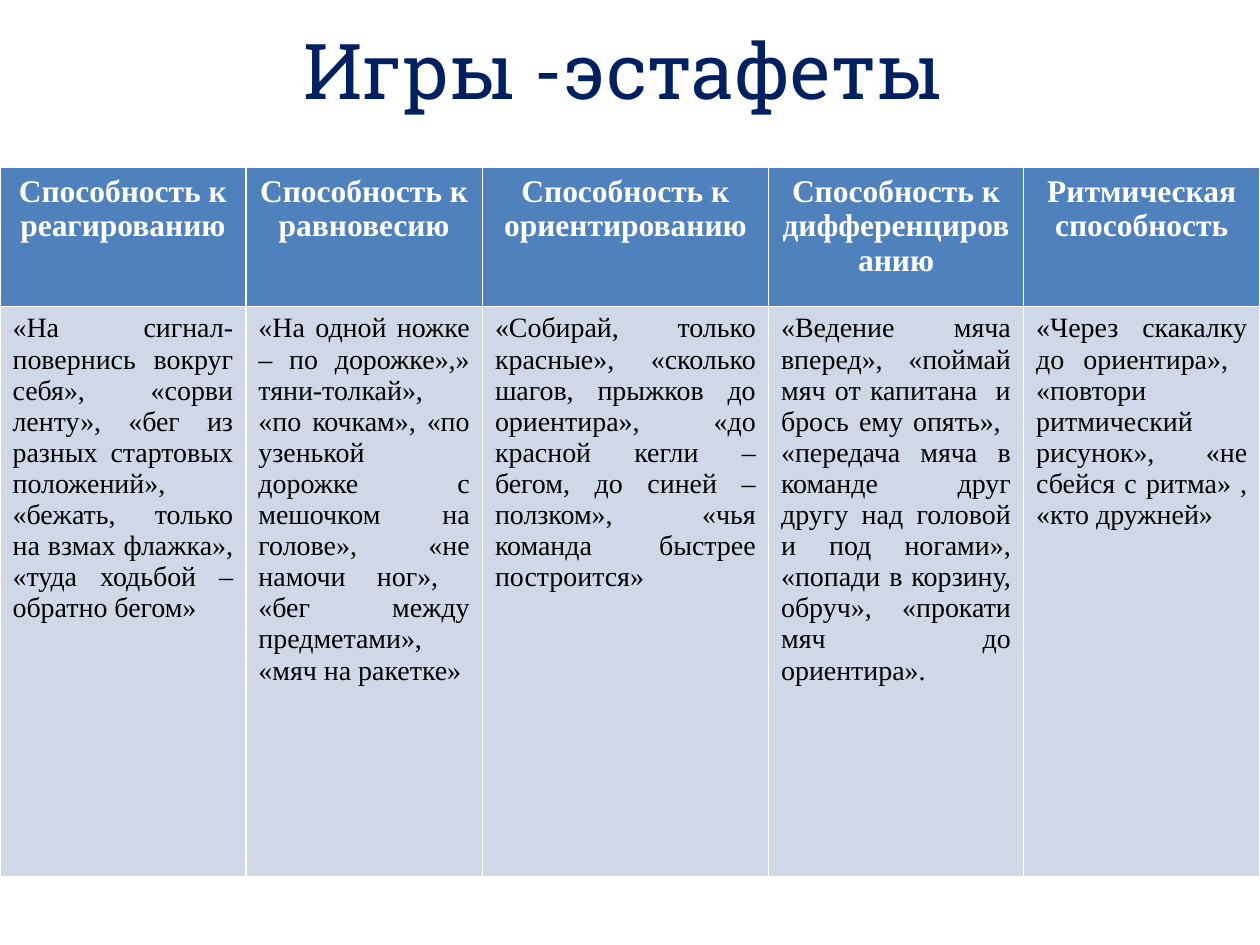
from pptx import Presentation
from pptx.dml.color import RGBColor
from pptx.enum.text import MSO_ANCHOR, PP_ALIGN
from pptx.util import Pt

TITLE = "Игры -эстафеты"
ABILITIES = [
    ("Способность к реагированию", 140.5,
     "«На сигнал-повернись вокруг себя»,  «сорви ленту», «бег из разных стартовых "
     "положений»,  «бежать, только на взмах флажка», «туда ходьбой – обратно бегом»"),
    ("Способность к равновесию", 135.2,
     "«На одной ножке – по дорожке»,» тяни-толкай», «по кочкам», «по узенькой дорожке "
     "с мешочком на голове», «не намочи ног»,  «бег между предметами», «мяч на ракетке»"),
    ("Способность к ориентированию", 163.5,
     "«Собирай, только красные», «сколько шагов, прыжков до ориентира», «до красной "
     "кегли – бегом, до синей – ползком», «чья команда быстрее построится»"),
    ("Способность к дифференцированию", 145.8,
     "«Ведение мяча вперед», «поймай мяч от капитана  и брось ему опять»,  «передача "
     "мяча в команде друг другу над головой и под ногами», «попади в корзину, обруч», "
     "«прокати мяч до ориентира». "),
    ("Ритмическая способность", 135,
     "«Через скакалку до ориентира»,  «повтори ритмический рисунок», «не сбейся "
     "с ритма» , «кто дружней»"),
]
ROW_HEIGHTS = [79.4, 325.6]


def format_text(paragraph, font_name, size, color, align, bold=False):
    paragraph.alignment = align
    for run in paragraph.runs:
        run.font.name = font_name
        run.font.size = Pt(size)
        run.font.bold = bold
        run.font.color.rgb = RGBColor.from_string(color)


def fill_cell(cell, text, fill, size, color, align, bold):
    cell.text_frame.text = text
    cell.fill.solid()
    cell.fill.fore_color.rgb = RGBColor.from_string(fill)
    format_text(cell.text_frame.paragraphs[0], "Times New Roman", size, color, align, bold)


def main():
    deck = Presentation()
    deck.slide_width, deck.slide_height = Pt(720), Pt(540)
    slide = deck.slides.add_slide(deck.slide_layouts[5])

    title = slide.shapes.title
    title.left, title.top, title.width, title.height = Pt(28), Pt(0), Pt(656), Pt(78.5)
    title.text_frame.text = TITLE
    title.text_frame.vertical_anchor = MSO_ANCHOR.MIDDLE
    format_text(title.text_frame.paragraphs[0], "Roboto Slab", 44, "002060", PP_ALIGN.CENTER)

    games = slide.shapes.add_table(len(ROW_HEIGHTS), len(ABILITIES), Pt(0), Pt(95.8),
                                   Pt(720), Pt(sum(ROW_HEIGHTS))).table
    for row, height in zip(games.rows, ROW_HEIGHTS):
        row.height = Pt(height)
    for index, (ability, width, relays) in enumerate(ABILITIES):
        games.columns[index].width = Pt(width)
        fill_cell(games.cell(0, index), ability, "4F81BD", 18, "FFFFFF", PP_ALIGN.CENTER, True)
        fill_cell(games.cell(1, index), relays, "D0D8E8", 16, "000000", PP_ALIGN.JUSTIFY, False)

    deck.save("out.pptx")


if __name__ == "__main__":
    main()
